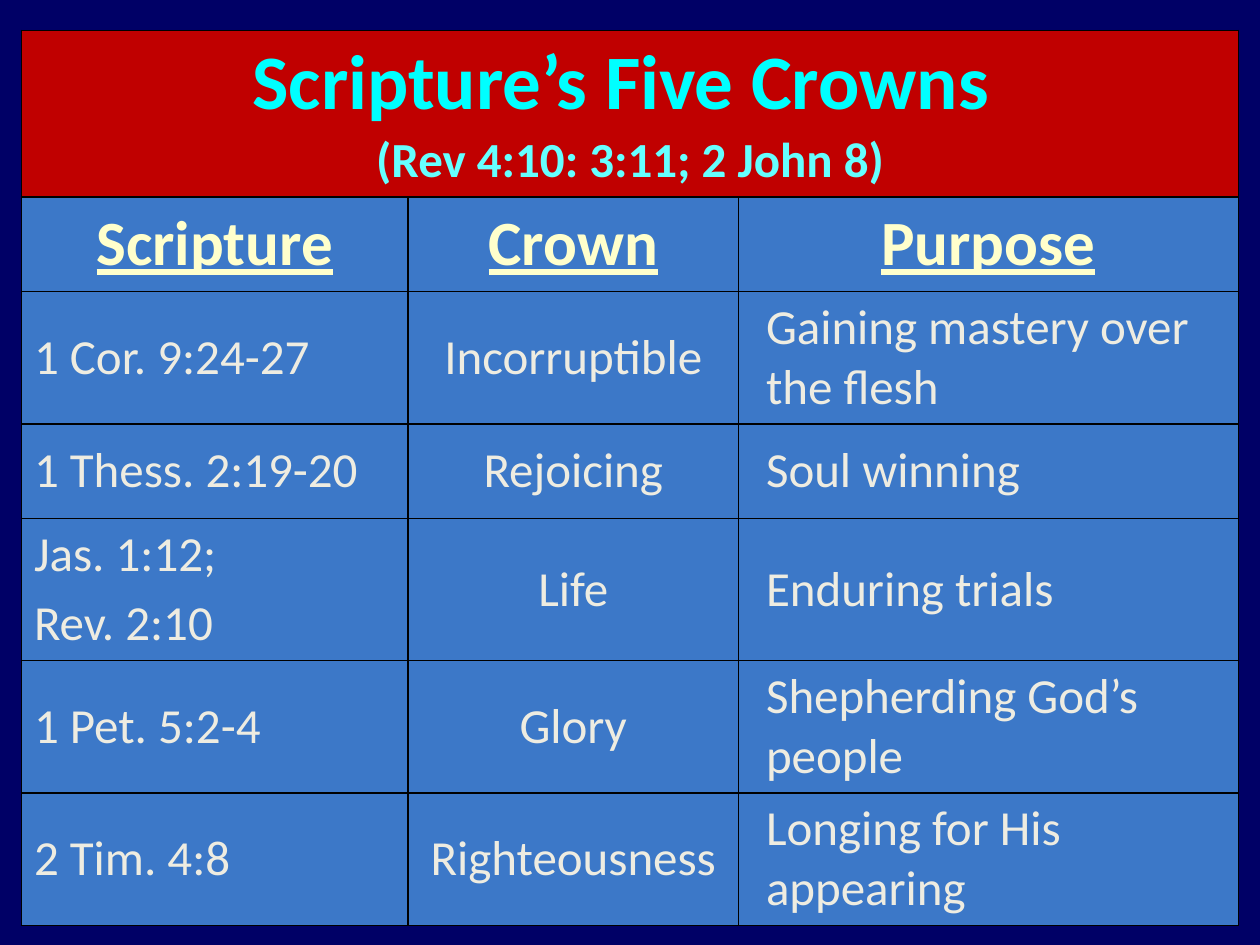
from lxml import etree
from pptx import Presentation
from pptx.dml.color import RGBColor
from pptx.enum.text import MSO_ANCHOR, PP_ALIGN
from pptx.oxml.ns import qn
from pptx.util import Inches, Pt

LEFT, CENTER = PP_ALIGN.LEFT, PP_ALIGN.CENTER
MIDDLE = MSO_ANCHOR.MIDDLE

COLORS = {
    "back": "000066", "band": "C00000", "cell": "3C78C8", "line": "000000",
    "title": "00FFFF", "verse": "66FFFF", "head": "FFFFCC", "body": "EEECE1",
}
FORMATS = {
    "title": {"size": Pt(44), "bold": True},
    "verse": {"size": Pt(28), "bold": True},
    "head": {"size": Pt(36), "bold": True, "underline": True},
    "body": {"size": Pt(28), "bold": False},
}
COLS = [3.07, 2.62, 3.97]
ROWS = [0.75, 0.75, 0.9, 0.75, 0.75, 0.9, 0.9]
ALIGNS = [LEFT, CENTER, LEFT]
INDENTS = [0, 0, 0.12]
HEADS = ["Scripture", "Crown", "Purpose"]
CROWNS = [
    ["1 Cor. 9:24-27", "Incorruptible", "Gaining mastery over the flesh"],
    ["1 Thess. 2:19-20", "Rejoicing", "Soul winning"],
    ["Jas. 1:12;\nRev. 2:10", "Life", "Enduring trials"],
    ["1 Pet. 5:2-4", "Glory", "Shepherding God’s people"],
    ["2 Tim. 4:8", "Righteousness", "Longing for His appearing"],
]


def color(name):
    return RGBColor.from_string(COLORS[name])


class Deck:
    """Holds the style and the current slide."""

    font = "Calibri"

    def __init__(self, slide):
        self.slide = slide
        fill = slide.background.fill
        fill.solid()
        fill.fore_color.rgb = color("back")

    def table(self, left, top, width, height):
        frame = self.slide.shapes.add_table(
            len(ROWS), len(COLS), Inches(left), Inches(top),
            Inches(width), Inches(height))
        table = frame.table
        for col, size in zip(table.columns, COLS):
            col.width = Inches(size)
        for row, size in zip(table.rows, ROWS):
            row.height = Inches(size)
        frame.height = Inches(height)
        for cell in table.iter_cells():
            self.border(cell)
            self.paint(cell, "cell")
        return table

    def paint(self, cell, name):
        cell.fill.solid()
        cell.fill.fore_color.rgb = color(name)

    def border(self, cell):
        props = cell._tc.get_or_add_tcPr()
        for side in ("a:lnL", "a:lnR", "a:lnT", "a:lnB"):
            line = etree.SubElement(props, qn(side), w=str(Pt(1)))
            fill = etree.SubElement(line, qn("a:solidFill"))
            etree.SubElement(fill, qn("a:srgbClr"), val=COLORS["line"])

    def para(self, para, align, indent=0):
        """Align and indent a paragraph, with a fifth of a line before it."""
        para.alignment = align
        props = para._p.get_or_add_pPr()
        if indent:
            props.set("marL", str(Inches(indent)))
            props.set("indent", "0")
        space = etree.SubElement(props, qn("a:spcBef"))
        etree.SubElement(space, qn("a:spcPct"), val="20000")

    def run(self, para, text, style):
        run = para.add_run()
        run.text = text
        run.font.name = self.font
        run.font.color.rgb = color(style)
        for key, value in FORMATS[style].items():
            setattr(run.font, key, value)

    def cell(self, cell, text, style, align, indent=0):
        cell.vertical_anchor = MIDDLE
        frame = cell.text_frame
        for i, line in enumerate(text.split("\n")):
            para = frame.add_paragraph() if i else frame.paragraphs[0]
            self.para(para, align, indent)
            self.run(para, line, style)

    def banner(self, table, title, verse):
        cell = table.cell(0, 0)
        cell.merge(table.cell(0, len(COLS) - 1))
        self.paint(cell, "band")
        self.cell(cell, title, "title", CENTER)
        para = cell.text_frame.paragraphs[0]
        para.add_line_break()
        self.run(para, verse, "verse")


def main():
    prs = Presentation()
    prs.slide_width, prs.slide_height = Inches(10), Inches(7.5)
    deck = Deck(prs.slides.add_slide(prs.slide_layouts[6]))

    table = deck.table(0.17, 0.24, 9.66, 7.03)
    deck.banner(table, "Scripture’s Five Crowns ", "(Rev 4:10: 3:11; 2 John 8)")
    for c, head in enumerate(HEADS):
        deck.cell(table.cell(1, c), head, "head", CENTER)
    for r, crown in enumerate(CROWNS, 2):
        for c, text in enumerate(crown):
            deck.cell(table.cell(r, c), text, "body", ALIGNS[c], INDENTS[c])

    prs.save("out.pptx")


if __name__ == "__main__":
    main()
